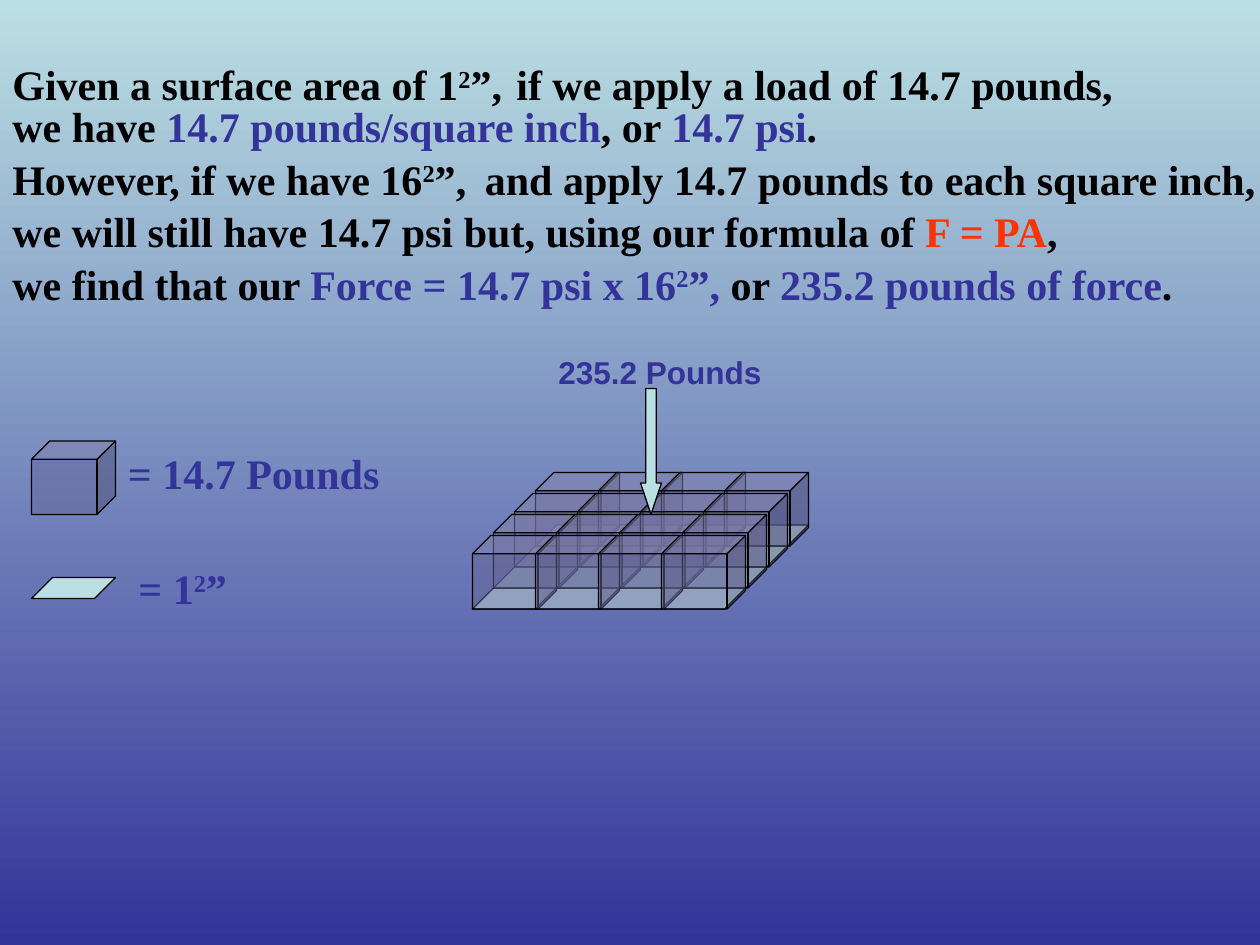
from lxml.etree import SubElement
from pptx import Presentation
from pptx.dml.color import RGBColor
from pptx.enum.shapes import MSO_SHAPE as Preset
from pptx.oxml.ns import qn
from pptx.util import Pt

BLACK = RGBColor(0, 0, 0)
BLUE = RGBColor(0x33, 0x33, 0x99)
RED = RGBColor(0xFF, 0x33, 0x00)
PALE = RGBColor(0xBB, 0xE0, 0xE3)
SLATE = RGBColor(0x66, 0x66, 0x99)
SERIF, SANS = "Times New Roman", "Arial"
SUPERSCRIPT = 30000

TEXTS = [
    (0, 30, 306, [("Given a surface area of 1", BLACK), ("2", BLACK, SUPERSCRIPT), ("”,", BLACK)]),
    (288, 30, 372, [("if we apply a load of 14.7 pounds,", BLACK)]),
    (0, 54, 516, [("we have ", BLACK), ("14.7 pounds/square inch", BLUE), (", or ", BLACK),
                  ("14.7 psi", BLUE), (".", BLACK)]),
    (0, 84, 282, [("However, if we have 16", BLACK), ("2", BLACK, SUPERSCRIPT), ("”,", BLACK)]),
    (270, 84, 468, [("and apply 14.7 pounds to each square inch,", BLACK)]),
    (0, 114, 276, [("we will still have 14.7 psi", BLACK)]),
    (258, 114, 420, [("but, using our formula of ", BLACK), ("F = PA", RED), (",", BLACK)]),
    (0, 144, 708, [("we find that our ", BLACK), ("Force = 14.7 psi x 16", BLUE),
                   ("2", BLUE, SUPERSCRIPT), ("”,", BLUE), (" or ", BLACK),
                   ("235.2 pounds of force", BLUE), (".", BLACK)]),
    (66, 252, 168, [("= 14.7 Pounds", BLUE)]),
    (72, 318, 78, [("= 1", BLUE), ("2", BLUE, SUPERSCRIPT), ("”", BLUE)]),
]
FORCE_LABEL = (312, 198, 132, [("235.2 Pounds", BLUE)])

GRID_SIZE = 4
GRID_LEFT, PAD_TOP, CUBE_TOP = 306, 300, 270
COLUMN_STEP, ROW_STEP = 36, 12
CELL_WIDTH, PAD_HEIGHT, CUBE_HEIGHT = 48, 12, 42
LEGEND_LEFT = 18


def add_text(page, left, top, width, spans, font=SERIF, size=24, height=36):
    box = page.shapes.add_textbox(Pt(left), Pt(top), Pt(width), Pt(height))
    box.text_frame.word_wrap = True
    para = box.text_frame.paragraphs[0]
    for text, color, *baseline in spans:
        span = para.add_run()
        span.text = text
        span.font.name, span.font.size, span.font.bold = font, Pt(size), True
        span.font.color.rgb = color
        if baseline:
            span.font._element.set("baseline", str(baseline[0]))


def add_solid(page, preset, left, top, width, height, color, adjustments):
    shape = page.shapes.add_shape(preset, Pt(left), Pt(top), Pt(width), Pt(height))
    shape.shadow.inherit = False
    for index, value in enumerate(adjustments):
        shape.adjustments[index] = value
    shape.fill.solid()
    shape.fill.fore_color.rgb = color
    shape.line.color.rgb = BLACK
    shape.line.width = Pt(0.75)
    return shape


def add_pad(page, left, top):
    add_solid(page, Preset.PARALLELOGRAM, left, top, CELL_WIDTH, PAD_HEIGHT, PALE, [1])


def add_cube(page, left, top):
    cube = add_solid(page, Preset.CUBE, left, top, CELL_WIDTH, CUBE_HEIGHT, SLATE, [0.25])
    color = cube._element.spPr.find(qn("a:solidFill"))[0]
    SubElement(color, qn("a:alpha")).set("val", "50000")


def add_grid(page, add_cell, top):
    for row in range(GRID_SIZE):
        for column in range(GRID_SIZE):
            left = GRID_LEFT + column * COLUMN_STEP - row * ROW_STEP
            add_cell(page, left, top + row * ROW_STEP)


def main():
    deck = Presentation()
    deck.slide_width, deck.slide_height = Pt(720), Pt(540)
    page = deck.slides.add_slide(deck.slide_layouts[6])

    backdrop = page.background.fill
    backdrop.gradient()
    backdrop.gradient_angle = 270
    for stop, color, position in zip(backdrop.gradient_stops, (PALE, BLUE), (0, 1)):
        stop.color.rgb = color
        stop.position = position

    add_grid(page, add_pad, PAD_TOP)
    add_grid(page, add_cube, CUBE_TOP)
    add_cube(page, LEGEND_LEFT, 252)
    add_pad(page, LEGEND_LEFT, 330)
    for left, top, width, spans in TEXTS:
        add_text(page, left, top, width, spans)
    add_solid(page, Preset.DOWN_ARROW, 366, 222, 12, 72, PALE, [0.5, 1.5])
    add_text(page, *FORCE_LABEL, font=SANS, size=18, height=29)
    deck.save("out.pptx")


if __name__ == "__main__":
    main()
